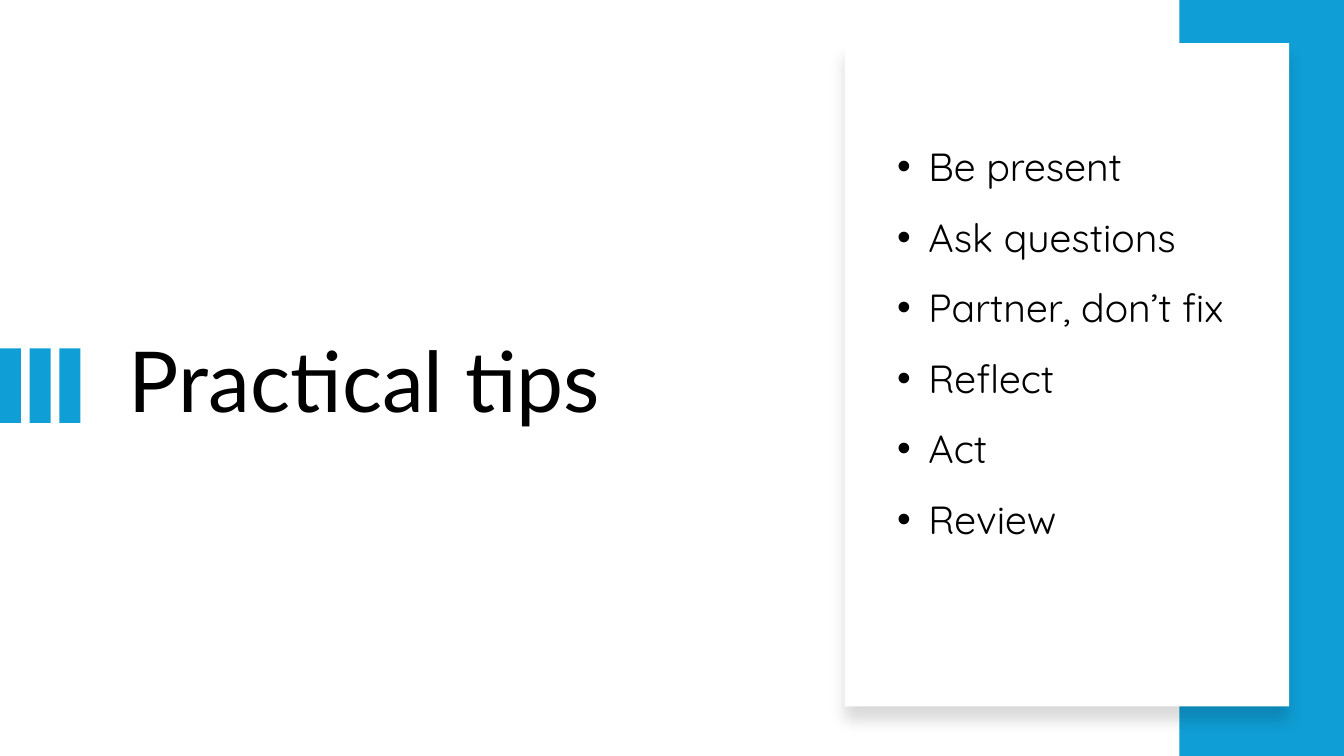
from pptx import Presentation
from pptx.dml.color import RGBColor
from pptx.enum.shapes import MSO_SHAPE as Shape
from pptx.enum.text import MSO_ANCHOR as Anchor, MSO_AUTO_SIZE as AutoSize
from pptx.oxml import parse_xml
from pptx.oxml.ns import nsdecls
from pptx.util import Cm, Pt

COLORS = {"accent": "0F9ED5", "card": "FFFFFF", "text": "000000"}
TIPS = ["Be present", "Ask questions", "Partner, don’t fix", "Reflect", "Act", "Review"]


def add_block(page, left, top, width, height, color):
    """Add a plain filled rectangle without outline or shadow."""
    block = page.shapes.add_shape(Shape.RECTANGLE, Cm(left), Cm(top), Cm(width), Cm(height))
    block.shadow.inherit = False
    block.fill.solid()
    block.fill.fore_color.rgb = RGBColor.from_string(COLORS[color])
    block.line.fill.background()
    return block


def add_text(page, left, top, width, height, lines, font, size, spacing):
    """Add a wrapping text box with one paragraph per line."""
    box = page.shapes.add_textbox(Cm(left), Cm(top), Cm(width), Cm(height))
    frame = box.text_frame
    frame.word_wrap = True
    frame.text = "\n".join(lines)
    for para in frame.paragraphs:
        para.line_spacing = spacing
        for span in para.runs:
            span.font.name = font
            span.font.size = Pt(size)
            span.font.color.rgb = RGBColor.from_string(COLORS["text"])
    return frame


def add_soft_shadow(block):
    """Give a block a faint shadow that falls straight down."""
    effects = block.element.spPr.find("{*}effectLst")
    effects.append(parse_xml(
        f'<a:outerShdw {nsdecls("a")} blurRad="{Pt(11)}" dist="{Pt(10)}" dir="5400000" '
        'algn="t" rotWithShape="0"><a:srgbClr val="000000"><a:alpha val="15000"/>'
        '</a:srgbClr></a:outerShdw>'))


def add_bullet(para, indent):
    """Turn a paragraph into a bulleted one with a hanging indent."""
    properties = para._p.get_or_add_pPr()
    properties.set("marL", str(Cm(indent)))
    properties.set("indent", str(-Cm(indent)))
    properties.append(parse_xml(f'<a:buFont {nsdecls("a")} typeface="Arial"/>'))
    properties.append(parse_xml(f'<a:buChar {nsdecls("a")} char="•"/>'))


def build_title(page, left, top, width, height):
    """Place the title with three accent bars at the slide edge."""
    bar_height = 1.88
    bar_top = top + (height - bar_height) / 2
    for index in range(3):
        add_block(page, index * 0.75, bar_top, 0.53, bar_height, "accent")
    frame = add_text(page, left, top, width, height, ["Practical tips"], "Lato", 60, 0.9)
    frame.vertical_anchor = Anchor.MIDDLE


def build_tips(page, left, top, width, height):
    """Place the white card with the bulleted tips."""
    add_soft_shadow(add_block(page, left, top, width, height, "card"))
    frame = add_text(page, left + 1.07, top + 1.78, width - 2.13, height - 4.11,
                     TIPS, "Quicksand", 28, 1.5)
    frame.auto_size = AutoSize.SHAPE_TO_FIT_TEXT
    for para in frame.paragraphs:
        add_bullet(para, 0.79)


def main():
    """Build the slide and save the deck."""
    deck = Presentation()
    deck.slide_width, deck.slide_height = Cm(33.87), Cm(19.05)
    page = deck.slides.add_slide(deck.slide_layouts[6])
    build_title(page, 3, 3.18, 16.76, 13.08)
    add_block(page, 29.72, 0, 4.15, 19.05, "accent")
    build_tips(page, 21.29, 1.09, 11.2, 16.71)
    deck.save("out.pptx")


if __name__ == "__main__":
    main()
